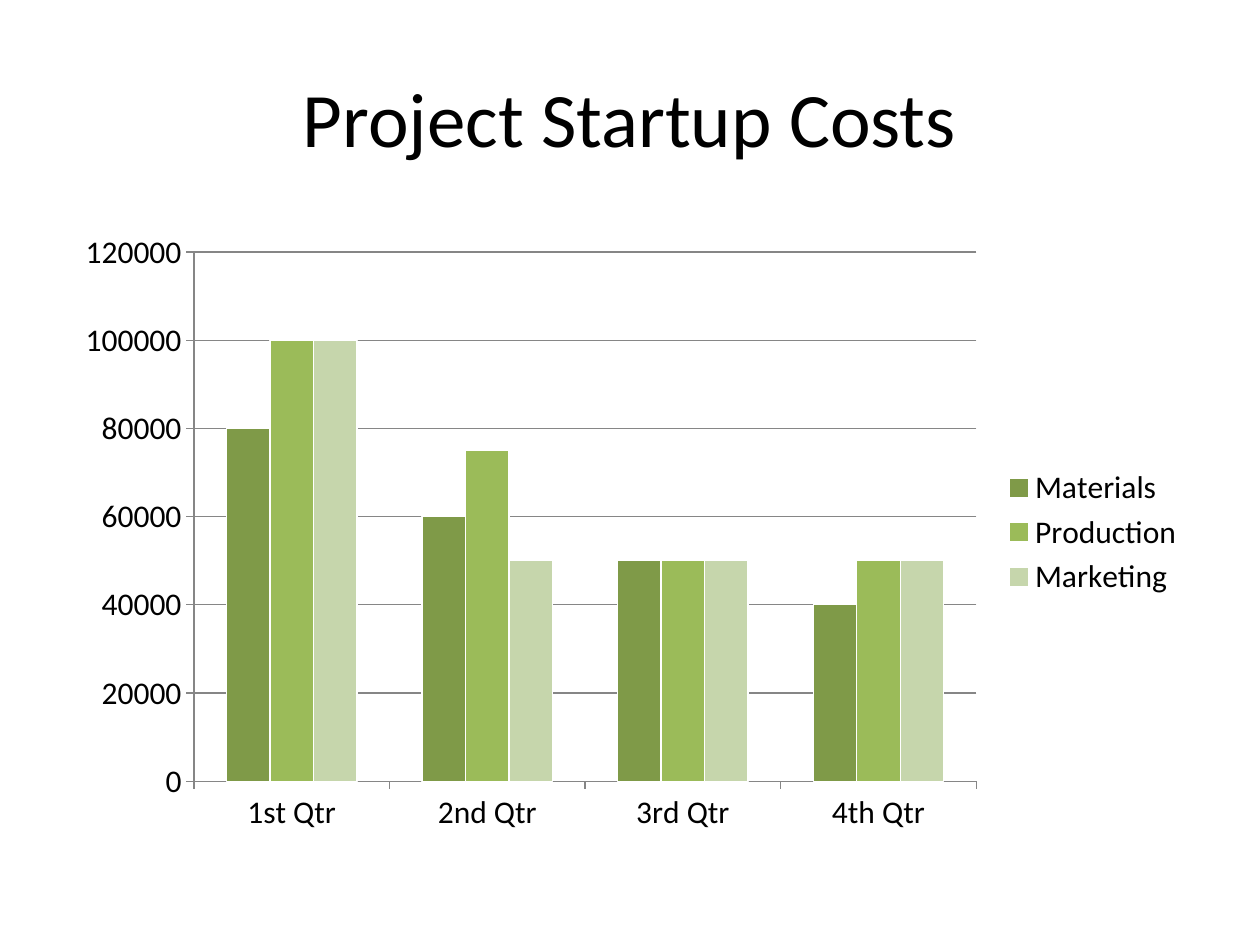
from pptx import Presentation
from pptx.chart.data import CategoryChartData
from pptx.dml.color import RGBColor
from pptx.enum.chart import XL_CHART_TYPE, XL_LEGEND_POSITION, XL_TICK_MARK
from pptx.enum.text import MSO_ANCHOR, PP_ALIGN
from pptx.util import Inches, Pt

COLUMNS = XL_CHART_TYPE.COLUMN_CLUSTERED
RIGHT = XL_LEGEND_POSITION.RIGHT
OUTSIDE = XL_TICK_MARK.OUTSIDE
MIDDLE = MSO_ANCHOR.MIDDLE
CENTER = PP_ALIGN.CENTER

BLACK = RGBColor(0x00, 0x00, 0x00)
WHITE = RGBColor(0xFF, 0xFF, 0xFF)
GRAY = RGBColor(0x86, 0x86, 0x86)
DARK = RGBColor(0x7F, 0x9A, 0x48)
GREEN = RGBColor(0x9B, 0xBB, 0x59)
PALE = RGBColor(0xC6, 0xD6, 0xAC)

QUARTERS = ["1st Qtr", "2nd Qtr", "3rd Qtr", "4th Qtr"]
COSTS = [
    ("Materials", DARK, [80000, 60000, 50000, 40000]),
    ("Production", GREEN, [100000, 75000, 50000, 50000]),
    ("Marketing", PALE, [100000, 50000, 50000, 50000]),
]


def style(font, size=18, color=BLACK, name="Calibri"):
    font.name = name
    font.size = Pt(size)
    font.color.rgb = color


def write(frame, text, align=CENTER, anchor=MIDDLE, **format):
    frame.text = text
    frame.word_wrap = True
    frame.vertical_anchor = anchor
    line = frame.paragraphs[0]
    line.alignment = align
    style(line.runs[0].font, **format)


class Deck:
    """Holds the style and the current slide; boxes are shares of its size."""

    def __init__(self, wide=10, high=7.5):
        self.prs = Presentation()
        self.prs.slide_width = Inches(wide)
        self.prs.slide_height = Inches(high)
        self.slide = self.prs.slides.add_slide(self.prs.slide_layouts[5])
        fill = self.slide.background.fill
        fill.solid()
        fill.fore_color.rgb = WHITE

    def place(self, left, top, wide, high):
        width, height = self.prs.slide_width, self.prs.slide_height
        return (round(left * width), round(top * height),
                round(wide * width), round(high * height))

    def title(self, text, *box):
        shape = self.slide.shapes.title
        shape.left, shape.top, shape.width, shape.height = self.place(*box)
        write(shape.text_frame, text, size=44)

    def chart(self, groups, rows, *box):
        data = CategoryChartData()
        data.categories = groups
        for name, _, values in rows:
            data.add_series(name, values)
        frame = self.slide.shapes.add_chart(COLUMNS, *self.place(*box), data)
        chart = frame.chart
        style(chart.font)
        chart.has_title = False
        chart.has_legend = True
        chart.legend.position = RIGHT
        chart.legend.include_in_layout = False
        self.axes(chart)
        self.bars(chart.plots[0], [color for _, color, _ in rows])

    def axes(self, chart):
        grid = chart.value_axis.major_gridlines
        for part in (chart.category_axis, chart.value_axis, grid):
            part.format.line.color.rgb = GRAY
            part.format.line.width = Pt(0.75)
        for axis in (chart.category_axis, chart.value_axis):
            axis.major_tick_mark = OUTSIDE
        chart.value_axis.minimum_scale = 0
        chart.value_axis.maximum_scale = 120000
        chart.value_axis.major_unit = 20000

    def bars(self, plot, colors):
        plot.gap_width = 150
        plot.overlap = 0
        plot.vary_by_categories = False
        for series, color in zip(plot.series, colors):
            series.format.fill.solid()
            series.format.fill.fore_color.rgb = color
            series.format.line.color.rgb = WHITE
            series.format.line.width = Pt(0.75)


def main():
    deck = Deck()
    deck.title("Project Startup Costs", 0.05, 0.04, 0.9, 1 / 6)
    deck.chart(QUARTERS, COSTS, 0.05, 7 / 30, 0.9, 0.66)
    deck.prs.save("out.pptx")


if __name__ == "__main__":
    main()
